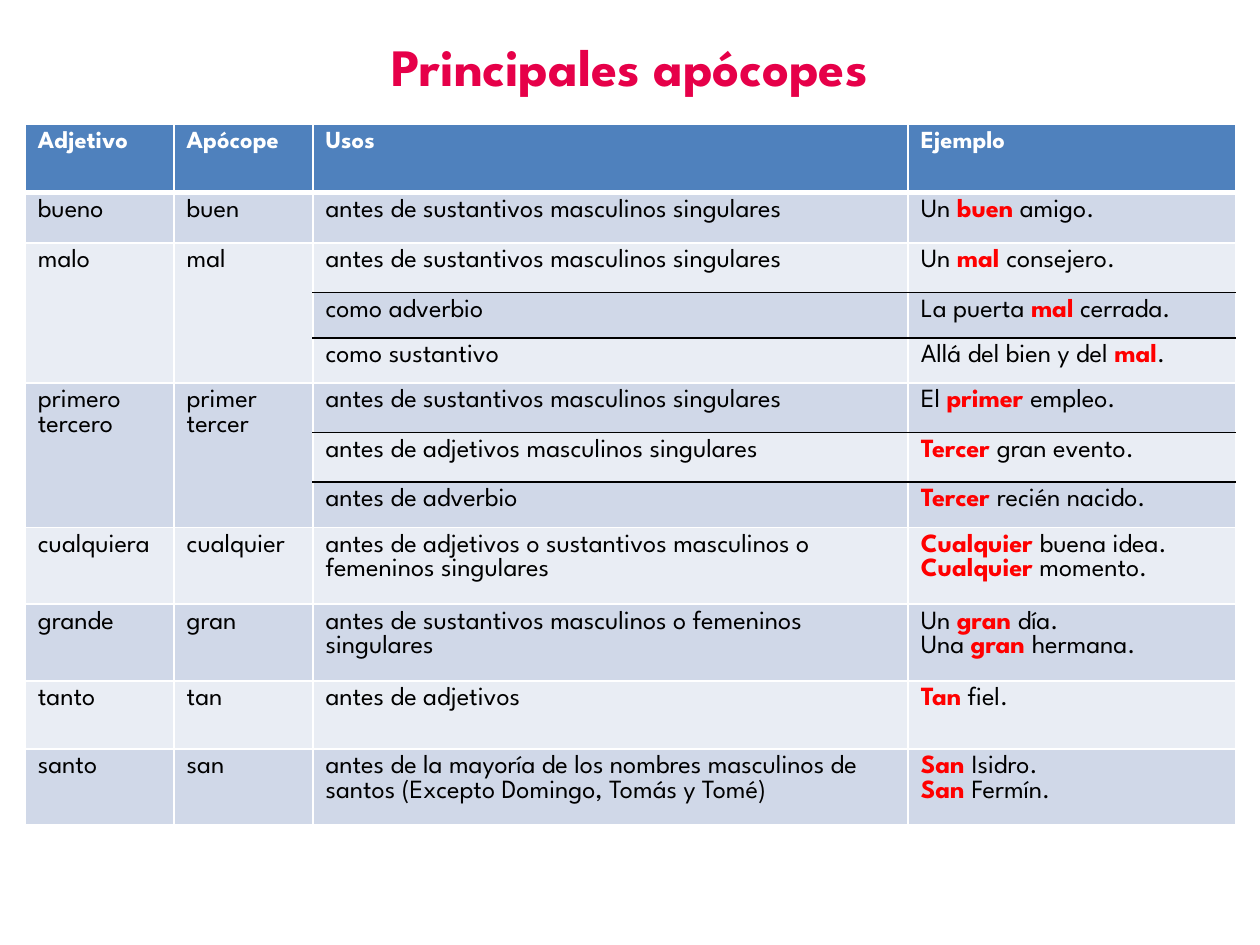
"""Build a slide with a table of the main Spanish apocopes."""
import pptx
import pptx.dml.color
import pptx.enum.text
import pptx.oxml.ns
import pptx.util
from lxml import etree
from pptx.util import Cm, Pt

FONT = "League Spartan"
WHITE = pptx.dml.color.RGBColor(0xFF, 0xFF, 0xFF)
BLACK = pptx.dml.color.RGBColor(0x00, 0x00, 0x00)
RED = pptx.dml.color.RGBColor(0xFF, 0x00, 0x00)
CRIMSON = pptx.dml.color.RGBColor(0xE6, 0x00, 0x49)
HEADER_BLUE = pptx.dml.color.RGBColor(0x4F, 0x81, 0xBD)
DARK_BAND = pptx.dml.color.RGBColor(0xD0, 0xD8, 0xE8)
LIGHT_BAND = pptx.dml.color.RGBColor(0xE9, 0xED, 0xF4)

COLUMN_WIDTHS = [3.0, 2.8, 12.0, 6.6]
ROWS = [
    (1.37, "Adjetivo", "Apócope", "Usos", "Ejemplo"),
    (1.02, "bueno", "buen", "antes de sustantivos masculinos singulares", "Un *buen* amigo."),
    (1.0, "malo", "mal", "antes de sustantivos masculinos singulares", "Un *mal *consejero."),
    (0.91, "", "", "como adverbio", "La puerta *mal* cerrada."),
    (0.91, "", "", "como sustantivo", "Allá del bien y del *mal*."),
    (1.0, "primero\ntercero", "primer\ntercer",
     "antes de sustantivos masculinos singulares", "El *primer *empleo."),
    (1.0, "", "", "antes de adjetivos masculinos singulares", "*Tercer *gran evento."),
    (0.91, "", "", "antes de adverbio", "*Tercer *recién nacido."),
    (1.55, "cualquiera", "cualquier",
     "antes de adjetivos o sustantivos masculinos o femeninos singulares",
     "*Cualquier *buena idea.\n*Cualquier* momento."),
    (1.55, "grande", "gran", "antes de sustantivos masculinos o femeninos singulares",
     "Un *gran *día.\nUna *gran *hermana."),
    (1.37, "tanto", "tan", "antes de adjetivos", "*Tan* fiel."),
    (1.52, "santo", "san",
     "antes de la mayoría de los nombres masculinos de santos (Excepto Domingo, Tomás y Tomé)",
     "*San *Isidro.\n*San *Fermín."),
]


def write_text(text_frame, text, size, color, bold=False, alignment=None):
    """Write lines as paragraphs, with the parts between asterisks in bold red."""
    for index, line in enumerate(text.split("\n")):
        paragraph = text_frame.paragraphs[0] if index == 0 else text_frame.add_paragraph()
        paragraph.alignment = alignment
        for part_index, part in enumerate(line.split("*")):
            if part:
                highlighted = part_index % 2 == 1
                run = paragraph.add_run()
                run.text = part
                run.font.name = FONT
                run.font.size = Pt(size)
                run.font.bold = bold or highlighted
                run.font.color.rgb = RED if highlighted else color


def add_border(cell, side, color, width):
    """Add a solid border to one side of a cell."""
    properties = cell._tc.get_or_add_tcPr()
    line = etree.SubElement(properties, pptx.oxml.ns.qn(f"a:ln{side}"), w=str(Pt(width)))
    fill = etree.SubElement(line, pptx.oxml.ns.qn("a:solidFill"))
    etree.SubElement(fill, pptx.oxml.ns.qn("a:srgbClr"), val=str(color))


presentation = pptx.Presentation()
presentation.slide_width = Cm(25.4)
presentation.slide_height = Cm(19.05)
slide = presentation.slides.add_slide(presentation.slide_layouts[5])

title = slide.shapes.title
title.left, title.top, title.width, title.height = Cm(0), Cm(0.53), Cm(25.4), Cm(1.55)
title.text_frame.vertical_anchor = pptx.enum.text.MSO_ANCHOR.BOTTOM
title.text_frame.auto_size = pptx.enum.text.MSO_AUTO_SIZE.NONE
write_text(title.text_frame, "Principales apócopes", size=30, color=CRIMSON, bold=True,
           alignment=pptx.enum.text.PP_ALIGN.CENTER)

table = slide.shapes.add_table(
    len(ROWS), len(COLUMN_WIDTHS), Cm(0.51), Cm(2.51),
    Cm(sum(COLUMN_WIDTHS)), Cm(sum(row[0] for row in ROWS))).table
table.horz_banding = False
for column, width in zip(table.columns, COLUMN_WIDTHS):
    column.width = Cm(width)

for row_index, (height, *texts) in enumerate(ROWS):
    table.rows[row_index].height = Cm(height)
    is_header = row_index == 0
    continues_above = not texts[0]
    continues_below = row_index + 1 < len(ROWS) and not ROWS[row_index + 1][1]
    band = DARK_BAND if row_index % 2 else LIGHT_BAND
    for column_index, text in enumerate(texts):
        cell = table.cell(row_index, column_index)
        is_detail = column_index >= 2
        add_border(cell, "L", WHITE, 1)
        add_border(cell, "R", WHITE, 1)
        add_border(cell, "T", BLACK if is_detail and continues_above else WHITE,
                   3 if row_index == 1 else 1)
        add_border(cell, "B", BLACK if is_detail and continues_below else WHITE,
                   3 if is_header else 1)
        cell.fill.solid()
        cell.fill.fore_color.rgb = HEADER_BLUE if is_header else band
        write_text(cell.text_frame, text, size=14 if is_header else 15,
                   color=WHITE if is_header else BLACK, bold=is_header)

for first_row in (2, 5):
    for column_index in (0, 1):
        table.cell(first_row, column_index).merge(table.cell(first_row + 2, column_index))

presentation.save("out.pptx")
